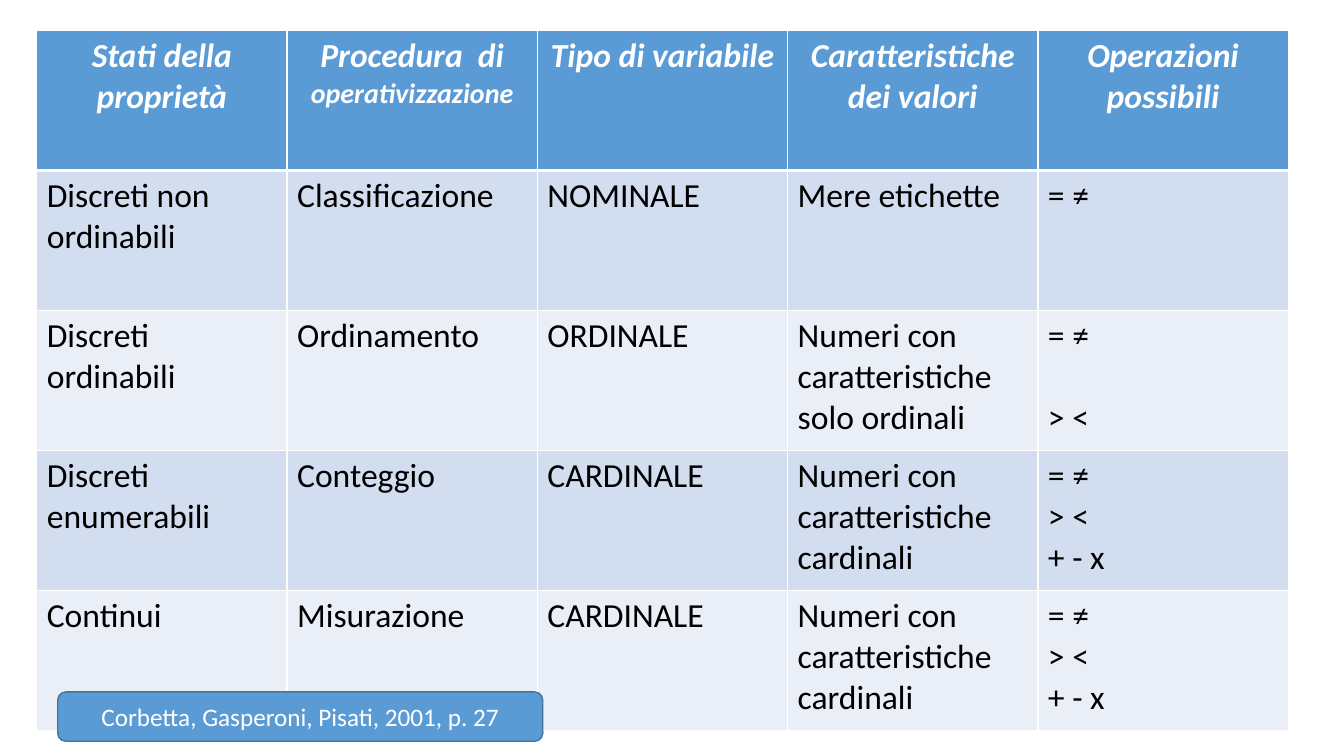
import pptx
import pptx.dml.color
import pptx.enum.shapes
import pptx.enum.text
import pptx.oxml.ns
import pptx.util
from lxml import etree

EMU_PER_PX = 9525
FONT = "Calibri"
BLUE, DARK_BLUE, WHITE, BLACK = "5B9BD5", "43739E", "FFFFFF", "000000"
BANDS = ("D2DEEF", "EAEFF7")
CENTER = pptx.enum.text.PP_ALIGN.CENTER

HEADINGS = [
    "Stati della proprietà",
    "Procedura  di ",
    "Tipo di variabile",
    "Caratteristiche dei valori",
    "Operazioni possibili",
]
PROCEDURE_ENDING = "operativizzazione"
VARIABLES = [
    ["Discreti non ordinabili", "Classificazione", "NOMINALE", "Mere etichette", "= ≠"],
    ["Discreti ordinabili", "Ordinamento", "ORDINALE",
     "Numeri con caratteristiche solo ordinali", "= ≠\n> <"],
    ["Discreti enumerabili", "Conteggio", "CARDINALE",
     "Numeri con caratteristiche cardinali", "= ≠\n> <\n+ - x"],
    ["Continui", "Misurazione", "CARDINALE",
     "Numeri con caratteristiche cardinali", "= ≠\n> <\n+ - x"],
]
SOURCE = "Corbetta, Gasperoni, Pisati, 2001, p. 27"


def px(length):
    return pptx.util.Emu(round(length * EMU_PER_PX))


def rgb(value):
    return pptx.dml.color.RGBColor.from_string(value)


def fill(target, color):
    target.fill.solid()
    target.fill.fore_color.rgb = rgb(color)


def style_run(run, size, color, emphasis=False):
    run.font.name = FONT
    run.font.size = pptx.util.Pt(size)
    run.font.color.rgb = rgb(color)
    run.font.bold = run.font.italic = emphasis


def set_borders(cell, **points):
    """Draw white borders; points maps the sides L, R, T and B to widths."""
    properties = cell._tc.get_or_add_tcPr()
    for side, width in points.items():
        border = etree.SubElement(properties, pptx.oxml.ns.qn(f"a:ln{side}"),
                                  w=str(pptx.util.Pt(width)))
        solid = etree.SubElement(border, pptx.oxml.ns.qn("a:solidFill"))
        etree.SubElement(solid, pptx.oxml.ns.qn("a:srgbClr"), val=WHITE)


def add_variable_table(slide, left, top, width, height):
    rows = [HEADINGS] + VARIABLES
    table = slide.shapes.add_table(len(rows), len(HEADINGS), px(left), px(top),
                                   px(width), px(height)).table
    for column in table.columns:
        column.width = px(width / len(HEADINGS))
    for row_index, texts in enumerate(rows):
        table.rows[row_index].height = px(height / len(rows))
        is_header = row_index == 0
        for column_index, text in enumerate(texts):
            cell = table.cell(row_index, column_index)
            set_borders(cell, L=1, R=1, T=3 if row_index == 1 else 1,
                        B=3 if is_header else 1)
            fill(cell, BLUE if is_header else BANDS[(row_index - 1) % 2])
            cell.text_frame.text = text
            for paragraph in cell.text_frame.paragraphs:
                if is_header:
                    paragraph.alignment = CENTER
                for run in paragraph.runs:
                    style_run(run, 24, WHITE if is_header else BLACK, is_header)

    procedure_ending = table.cell(0, 1).text_frame.paragraphs[0].add_run()
    procedure_ending.text = PROCEDURE_ENDING
    style_run(procedure_ending, 20, WHITE, True)

    # The ordinal comparison signs stand one line lower than the equality signs.
    comparison = table.cell(2, 4).text_frame.paragraphs[1]
    comparison.space_before = pptx.util.Pt(29)


def add_source_label(slide, left, top, width, height):
    label = slide.shapes.add_shape(pptx.enum.shapes.MSO_SHAPE.ROUNDED_RECTANGLE,
                                   px(left), px(top), px(width), px(height))
    label.shadow.inherit = False
    fill(label, BLUE)
    label.line.color.rgb = rgb(DARK_BLUE)
    label.line.width = pptx.util.Pt(1)
    label.text_frame.text = SOURCE
    label.text_frame.word_wrap = True
    label.text_frame.vertical_anchor = pptx.enum.text.MSO_ANCHOR.MIDDLE
    citation = label.text_frame.paragraphs[0]
    citation.alignment = CENTER
    style_run(citation.runs[0], 18, WHITE)


def main():
    deck = pptx.Presentation()
    deck.slide_width, deck.slide_height = px(1280), px(720)
    slide = deck.slides.add_slide(deck.slide_layouts[6])
    add_variable_table(slide, 35, 29, 1192, 667)
    add_source_label(slide, 55, 659, 462, 47)
    deck.save("out.pptx")


if __name__ == "__main__":
    main()
